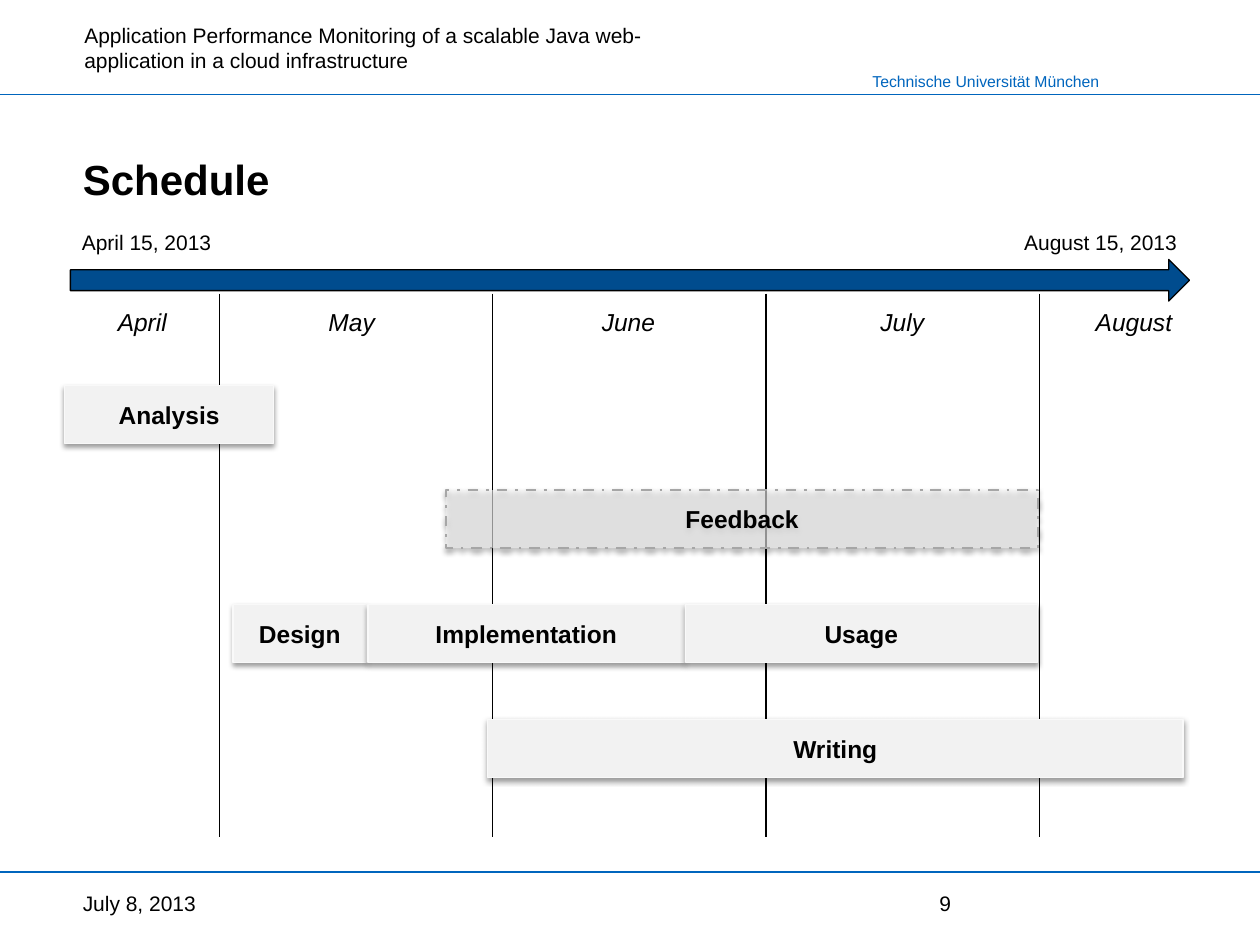
"""Build a project schedule slide with a month timeline and phase bars."""
from dataclasses import dataclass

from lxml.etree import SubElement
from pptx import Presentation
from pptx.dml.color import RGBColor
from pptx.enum.dml import MSO_LINE
from pptx.enum.shapes import MSO_CONNECTOR, MSO_SHAPE
from pptx.enum.text import MSO_ANCHOR, PP_ALIGN
from pptx.oxml.ns import qn
from pptx.util import Cm, Pt


@dataclass(frozen=True)
class Theme:
    font: str = "Arial"
    ink: str = "000000"
    rule: str = "0065BD"
    arrow: str = "004C8E"
    bar: str = "F2F2F2"
    edge: str = "F9F9F9"
    dashed: str = "A6A6A6"
    title: int = 24
    label: int = 14
    body: int = 12
    small: int = 9


T = Theme()
L, C, R = PP_ALIGN.LEFT, PP_ALIGN.CENTER, PP_ALIGN.RIGHT
TOP, MID, LOW = MSO_ANCHOR.TOP, MSO_ANCHOR.MIDDLE, MSO_ANCHOR.BOTTOM
W, H = 25.4, 19.05

TEXTS = [
    ("Technische Universität München", (17.3, 1.32, 5.11, 0.64), R, TOP, False,
     dict(size=T.small, color=T.rule)),
    ("Application Performance Monitoring of a scalable Java web-application in a cloud infrastructure",
     (1.45, 0.33, 12.55, 1.27), L, TOP, True, {}),
    ("Schedule", (1.42, 2.54, 22.58, 1.7), L, LOW, True, dict(size=T.title, bold=True)),
    ("July 8, 2013", (1.42, 17.78, 5.28, 0.84), L, MID, True, {}),
    ("9", (18.69, 17.78, 5.28, 0.84), L, MID, True, {}),
    ("April 15, 2013", (1.4, 4.5, 3.18, 0.76), L, TOP, False, {}),
    ("August 15, 2013", (20.32, 4.5, 3.66, 0.76), R, TOP, False, {}),
]
MONTHS = [("April", 2.87), ("May", 7.09), ("June", 12.67), ("July", 18.19), ("August", 22.86)]
MONTH_W, MONTH_Y, MONTH_H = 2.2, 6.07, 0.86
RULES = [1.91, 17.58]
GRID_X, GRID_STEP, GRID_TOP, GRID_END = 4.42, 5.51, 5.92, 16.87
ARROW = (1.42, 5.23, 22.56, 0.84)
BAR_H = 1.17
ROWS = [
    (7.77, [("Analysis", 1.3, 4.22, False)]),
    (12.19, [("Design", 4.7, 2.69, False), ("Implementation", 7.42, 6.38, False),
             ("Usage", 13.82, 7.09, False)]),
    (9.88, [("Feedback", 8.99, 11.94, True)]),
    (14.5, [("Writing", 9.83, 14.02, False)]),
]


def rgb(color):
    return RGBColor.from_string(color)


def write(sp, text, align, anchor, wrap=True, size=T.body, color=T.ink, bold=False, italic=False):
    tf = sp.text_frame
    tf.word_wrap, tf.vertical_anchor = wrap, anchor
    p = tf.paragraphs[0]
    p.text, p.alignment = text, align
    f = p.font
    f.name, f.size, f.bold, f.italic = T.font, Pt(size), bold, italic
    f.color.rgb = rgb(color)


def add_text(s, text, box, align, anchor, wrap, style):
    write(s.shapes.add_textbox(*map(Cm, box)), text, align, anchor, wrap, **style)


def add_line(s, x1, y1, x2, y2, color):
    ln = s.shapes.add_connector(MSO_CONNECTOR.STRAIGHT, *map(Cm, (x1, y1, x2, y2)))
    ln.line.color.rgb, ln.line.width = rgb(color), Pt(0.75)
    SubElement(ln._element.spPr, qn("a:effectLst"))


def add_block(s, kind, box, fill, edge, width=0.75):
    sp = s.shapes.add_shape(kind, *map(Cm, box))
    sp.shadow.inherit = False
    sp.fill.solid()
    sp.fill.fore_color.rgb = rgb(fill)
    sp.line.color.rgb, sp.line.width = rgb(edge), Pt(width)
    return sp


def set_alpha(clr, percent):
    SubElement(clr, qn("a:alpha"), val=str(percent * 1000))


def add_shadow(sp):
    effects = sp._element.spPr.find(qn("a:effectLst"))
    shadow = SubElement(effects, qn("a:outerShdw"), blurRad=str(Pt(3.1)), dist=str(Pt(1.6)),
                        dir="5400000", rotWithShape="0")
    set_alpha(SubElement(shadow, qn("a:srgbClr"), val=T.ink), 38)


def add_bar(s, text, box, dashed):
    edge, width = (T.dashed, 1.5) if dashed else (T.edge, 0.75)
    sp = add_block(s, MSO_SHAPE.RECTANGLE, box, T.bar, edge, width)
    if dashed:
        sp.line.dash_style = MSO_LINE.DASH_DOT
        set_alpha(sp._element.spPr.find(qn("a:solidFill"))[0], 60)
    add_shadow(sp)
    write(sp, text, C, MID, size=T.label, bold=True)


def main():
    prs = Presentation()
    prs.slide_width, prs.slide_height = Cm(W), Cm(H)
    s = prs.slides.add_slide(prs.slide_layouts[6])
    for y in RULES:
        add_line(s, 0, y, W, y, T.rule)
    for i in range(len(MONTHS) - 1):
        x = GRID_X + i * GRID_STEP
        add_line(s, x, GRID_TOP, x, GRID_END, T.ink)
    for item in TEXTS:
        add_text(s, *item)
    add_block(s, MSO_SHAPE.RIGHT_ARROW, ARROW, T.arrow, T.ink)
    for name, mid in MONTHS:
        box = (mid - MONTH_W / 2, MONTH_Y, MONTH_W, MONTH_H)
        add_text(s, name, box, C, TOP, False, dict(size=T.label, italic=True))
    for y, bars in ROWS:
        for name, x, w, dashed in bars:
            add_bar(s, name, (x, y, w, BAR_H), dashed)
    prs.save("out.pptx")


if __name__ == "__main__":
    main()
